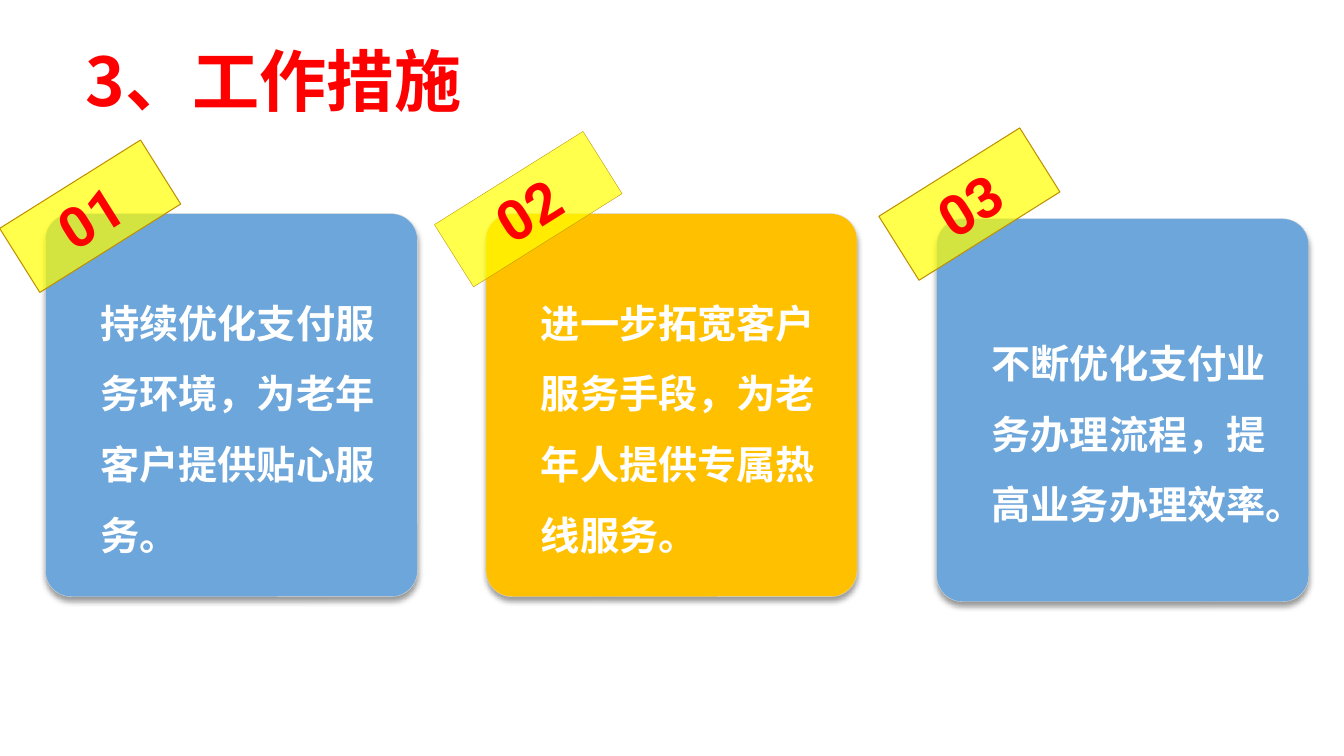
from dataclasses import dataclass

from lxml.etree import SubElement
from pptx import Presentation
from pptx.dml.color import RGBColor as Rgb
from pptx.enum.shapes import MSO_SHAPE as Kind
from pptx.enum.text import MSO_ANCHOR as Anchor, PP_ALIGN as Align
from pptx.oxml.ns import qn
from pptx.util import Inches, Pt


@dataclass(frozen=True)
class Theme:
    red: str = "FF0000"
    white: str = "FFFFFF"
    blue: str = "6CA6DA"
    gold: str = "FFC000"
    yellow: str = "FFFF00"
    edge: str = "D9D9D9"
    rim: str = "BF9000"
    shade: str = "000000"
    title: int = 48
    body: int = 28
    label: int = 40
    han: str = "Noto Sans CJK SC"
    latin: str = "Roboto"


THEME = Theme()
INSETS = {"margin_left": 0.47, "margin_top": 0.28,
          "margin_right": 0.1, "margin_bottom": 0.05}

# Each step: text, fill, card box, tag box, tag line width
STEPS = [
    ("持续优化支付服务环境，为老年客户提供贴心服务。", THEME.blue,
     (0.45, 2.12, 3.69, 3.8), (0.07, 1.77, 1.65, 0.75), 0.75),
    ("进一步拓宽客户服务手段，为老年人提供专属热线服务。", THEME.gold,
     (4.82, 2.12, 3.68, 3.8), (4.37, 1.71, 1.74, 0.73), 0.25),
    ("不断优化支付业务办理流程，提高业务办理效率。", THEME.blue,
     (9.29, 2.17, 3.69, 3.8), (8.79, 1.65, 1.65, 0.75), 0.75),
]


def write(shape, text, size, font, color, align=Align.LEFT, space=1.0):
    frame = shape.text_frame
    frame.word_wrap = True
    para = frame.paragraphs[0]
    para.alignment, para.line_spacing = align, space
    run = para.add_run()
    run.text = text
    style = {"size": Pt(size), "bold": True, "name": font}
    for key, value in style.items():
        setattr(run.font, key, value)
    run.font.color.rgb = Rgb.from_string(color)
    SubElement(run.font._element, qn("a:ea"), typeface=font)


def add_box(slide, kind, box, fill, line, width):
    shape = slide.shapes.add_shape(kind, *map(Inches, box))
    shape.shadow.inherit = False
    shape.fill.solid()
    shape.fill.fore_color.rgb = Rgb.from_string(fill)
    shape.line.color.rgb = Rgb.from_string(line)
    shape.line.width = Pt(width)
    shape.text_frame.vertical_anchor = Anchor.MIDDLE
    return shape


def set_alpha(color, percent):
    SubElement(color, qn("a:alpha"), val=str(percent * 1000))


def cast_shadow(shape):
    """Drop a soft shadow straight down."""
    effects = shape._element.spPr.find(qn("a:effectLst"))
    outer = SubElement(effects, qn("a:outerShdw"), blurRad=str(Pt(4)),
                       dist=str(Pt(3)), dir="5400000", rotWithShape="0")
    set_alpha(SubElement(outer, qn("a:srgbClr"), val=THEME.shade), 40)


def add_title(slide, text):
    box = slide.shapes.add_textbox(*map(Inches, (0.75, 0.34, 4.95, 0.91)))
    write(box, text, THEME.title, THEME.han, THEME.red)


def add_card(slide, text, fill, box):
    card = add_box(slide, Kind.ROUNDED_RECTANGLE, box, fill, THEME.edge, 0.25)
    card.adjustments[0] = 0.07
    cast_shadow(card)
    for key, value in INSETS.items():
        setattr(card.text_frame, key, Inches(value))
    write(card, text, THEME.body, THEME.han, THEME.white, space=1.5)


def add_tag(slide, text, box, width):
    tag = add_box(slide, Kind.RECTANGLE, box, THEME.yellow, THEME.rim, width)
    tag.rotation = 327.9
    set_alpha(tag._element.spPr.find(qn("a:solidFill"))[0], 70)
    write(tag, text, THEME.label, THEME.latin, THEME.red, Align.CENTER)


def main():
    deck = Presentation()
    deck.slide_width, deck.slide_height = Inches(13.33), Inches(7.5)
    slide = deck.slides.add_slide(deck.slide_layouts[6])
    add_title(slide, "3、工作措施")
    for num, (text, fill, card, tag, width) in enumerate(STEPS, 1):
        add_card(slide, text, fill, card)
        add_tag(slide, f"{num:02}", tag, width)
    deck.save("out.pptx")


if __name__ == "__main__":
    main()
